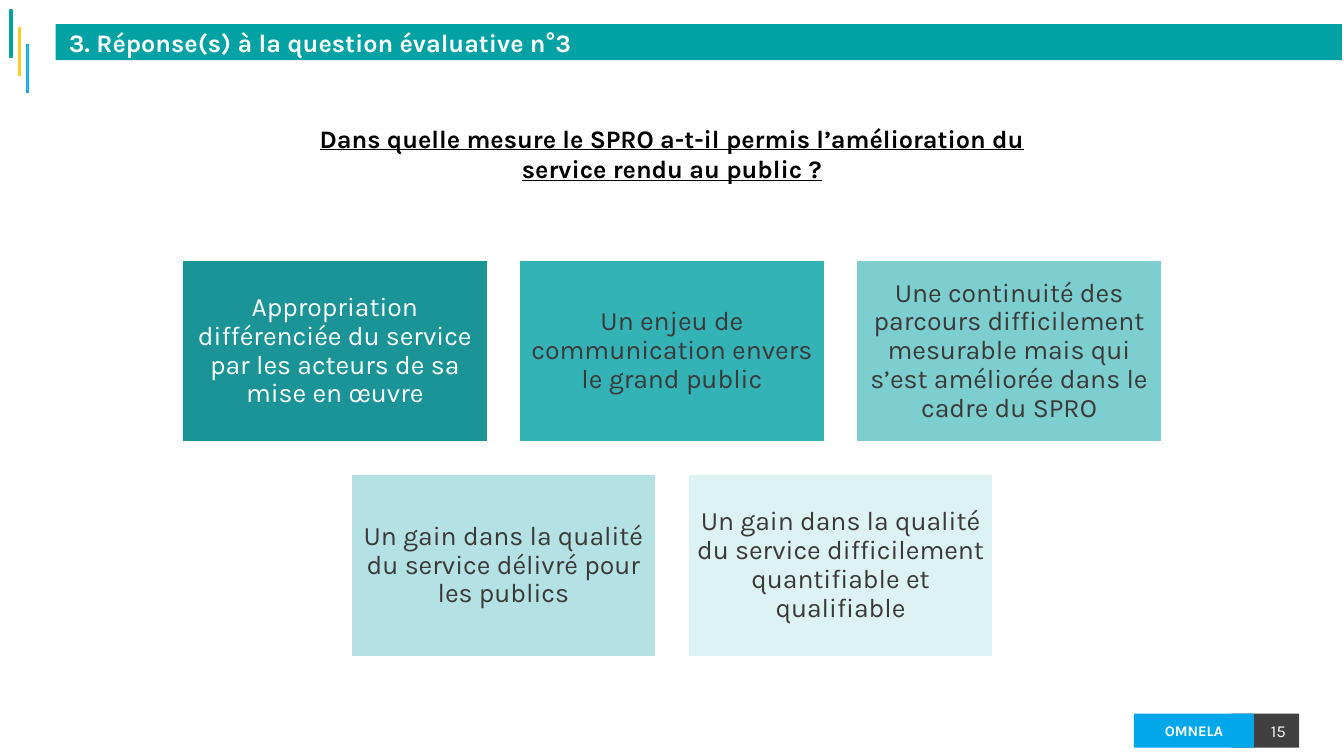
from lxml.etree import SubElement
from pptx import Presentation
from pptx.dml.color import RGBColor
from pptx.enum.shapes import MSO_SHAPE
from pptx.enum.text import MSO_ANCHOR, MSO_AUTO_SIZE, PP_ALIGN
from pptx.oxml.ns import qn
from pptx.util import Pt

FONT = "Karla"
SLIDE_WIDTH, SLIDE_HEIGHT = 960, 540
TEAL, BLUE, YELLOW, WHITE, DARK = "02A1A4", "02A7EA", "FDCC27", "FFFFFF", "3B3838"

# Cards: text, fill, opacity in percent, text colour
CARD_ROWS = [
    [
        ("Appropriation différenciée du service par les acteurs de sa mise en œuvre",
         "02898C", 90, WHITE),
        ("Un enjeu de communication envers le grand public", TEAL, 80, DARK),
        ("Une continuité des parcours difficilement mesurable mais qui s’est améliorée "
         "dans le cadre du SPRO", "46BABC", 70, DARK),
    ],
    [
        ("Un gain dans la qualité du service délivré pour les publics",
         "82D0D2", 60, DARK),
        ("Un gain dans la qualité du service difficilement quantifiable et qualifiable",
         "BCE6E7", 50, DARK),
    ],
]
CARD_WIDTH, CARD_HEIGHT, CARD_GAP, CARDS_TOP = 218.9, 131.2, 21.9, 185.2

# Stripes: left, top, colour
STRIPES = [(7.2, 7.2, TEAL), (13, 20, YELLOW), (18.8, 32, BLUE)]


def rgb(colour):
    return RGBColor.from_string(colour)


def set_fill(shape, colour, opacity=100):
    shape.fill.solid()
    shape.fill.fore_color.rgb = rgb(colour)
    if opacity < 100:
        colour_element = shape.fill._xPr.find(qn("a:solidFill"))[0]
        SubElement(colour_element, qn("a:alpha"), val=str(opacity * 1000))


def add_rectangle(slide, left, top, width, height, fill, opacity=100,
                  line=None, line_width=1):
    shape = slide.shapes.add_shape(
        MSO_SHAPE.RECTANGLE, Pt(left), Pt(top), Pt(width), Pt(height))
    shape.shadow.inherit = False
    set_fill(shape, fill, opacity)
    if line:
        shape.line.color.rgb = rgb(line)
        shape.line.width = Pt(line_width)
    else:
        shape.line.fill.background()
    return shape


def write(shape, text, size, colour, alignment=PP_ALIGN.CENTER, bold=False,
          underline=False, anchor=MSO_ANCHOR.MIDDLE, margins=(9.4, 5)):
    frame = shape.text_frame
    frame.text = text
    frame.word_wrap = True
    frame.auto_size = MSO_AUTO_SIZE.NONE
    frame.vertical_anchor = anchor
    frame.margin_left = frame.margin_right = Pt(margins[0])
    frame.margin_top = frame.margin_bottom = Pt(margins[1])
    paragraph = frame.paragraphs[0]
    paragraph.alignment = alignment
    font = paragraph.runs[0].font
    font.name, font.size, font.bold = FONT, Pt(size), bold
    font.underline = underline
    font.color.rgb = rgb(colour)
    return paragraph


def format_title(slide, text):
    title = slide.shapes.title
    title.left, title.top = Pt(39.8), Pt(17.2)
    title.width, title.height = Pt(918.7), Pt(25.8)
    set_fill(title, TEAL)
    write(title, text, 18, WHITE, PP_ALIGN.LEFT, bold=True)


def add_question(slide, text):
    box = slide.shapes.add_textbox(Pt(190.8), Pt(82.8), Pt(578.2), Pt(97.2))
    paragraph = write(box, text, 18, "000000", bold=True, underline=True,
                      anchor=MSO_ANCHOR.TOP)
    paragraph.space_before = paragraph.space_after = Pt(2)


def add_cards(slide):
    for row, cards in enumerate(CARD_ROWS):
        row_width = len(cards) * (CARD_WIDTH + CARD_GAP) - CARD_GAP
        row_left = (SLIDE_WIDTH - row_width) / 2
        top = CARDS_TOP + row * (CARD_HEIGHT + CARD_GAP)
        for column, (text, fill, opacity, colour) in enumerate(cards):
            left = row_left + column * (CARD_WIDTH + CARD_GAP)
            card = add_rectangle(slide, left, top, CARD_WIDTH, CARD_HEIGHT,
                                 fill, opacity, WHITE, 2)
            paragraph = write(card, text, 19, colour, margins=(5.7, 5.7))
            paragraph.line_spacing = 0.9


def add_footer(slide):
    number = add_rectangle(slide, 879.8, 509.8, 48.2, 24.2, "404040")
    write(number, "15", 12, WHITE, PP_ALIGN.RIGHT)
    name = add_rectangle(slide, 810, 509.8, 85.7, 24.2, BLUE)
    write(name, "OMNELA", 10.5, WHITE, bold=True)


def main():
    presentation = Presentation()
    presentation.slide_width = Pt(SLIDE_WIDTH)
    presentation.slide_height = Pt(SLIDE_HEIGHT)
    slide = presentation.slides.add_slide(presentation.slide_layouts[5])

    # Footer and corner stripes
    add_footer(slide)
    for left, top, colour in STRIPES:
        add_rectangle(slide, left, top, 1.4, 33.8, colour, 75, colour)

    # Title band, question and answers
    format_title(slide, "3. Réponse(s) à la question évaluative n°3")
    add_question(slide, "Dans quelle mesure le SPRO a-t-il permis l’amélioration "
                        "du service rendu au public ?")
    add_cards(slide)

    presentation.save("out.pptx")


if __name__ == "__main__":
    main()
